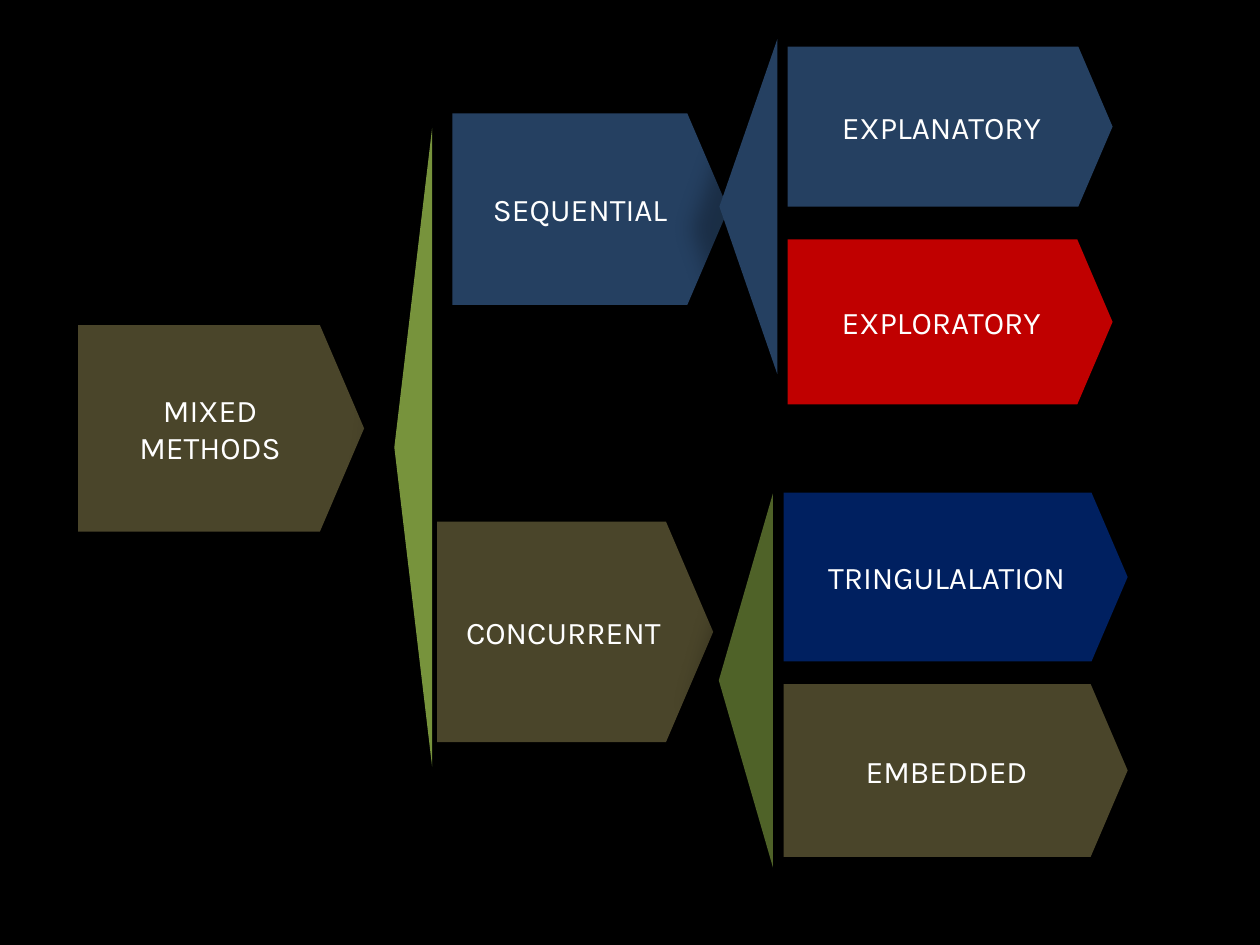
from lxml import etree
from pptx import Presentation
from pptx.dml.color import RGBColor
from pptx.enum.shapes import MSO_SHAPE
from pptx.enum.text import MSO_ANCHOR, PP_ALIGN
from pptx.oxml.ns import qn
from pptx.util import Inches, Pt

THEME = {
    "font": "Karla", "size": 18,
    "black": "000000", "white": "FFFFFF", "olive": "4A452A", "blue": "254061",
    "red": "C00000", "navy": "002060", "lime": "77933C", "green": "4F6228",
}
SHADOW = {"blurRad": Pt(11.8), "dist": Pt(19.7), "dir": 141 * 60000}
SHADOW_ALPHA = 28
POINT = 0.214

# label, colour, left, top, width, height
BOXES = [
    ("MIXED METHODS", "olive", 0.62, 2.58, 2.27, 1.64),
    ("SEQUENTIAL", "blue", 3.59, 0.9, 2.19, 1.52),
    ("CONCURRENT", "olive", 3.47, 4.14, 2.19, 1.75),
    ("EXPLANATORY", "blue", 6.25, 0.37, 2.58, 1.27),
    ("EXPLORATORY", "red", 6.25, 1.9, 2.58, 1.31),
    ("TRINGULALATION", "navy", 6.22, 3.91, 2.73, 1.34),
    ("EMBEDDED", "olive", 6.22, 5.43, 2.73, 1.37),
]
# colour, centre x, centre y, base, depth
BRANCHES = [
    ("lime", 3.28, 3.55, 5.07, 0.3),
    ("blue", 5.94, 1.64, 2.66, 0.46),
    ("green", 5.92, 5.4, 2.97, 0.43),
]


def color(name):
    return RGBColor.from_string(THEME[name])


def add_shadow(sp):
    sp.shadow.inherit = False
    effects = sp._element.spPr.find(qn("a:effectLst"))
    outer = etree.SubElement(effects, qn("a:outerShdw"), algn="ctr",
                             **{k: str(int(v)) for k, v in SHADOW.items()})
    tint = etree.SubElement(outer, qn("a:srgbClr"), val=THEME["black"])
    etree.SubElement(tint, qn("a:alpha"), val=str(SHADOW_ALPHA * 1000))


def add_solid(slide, kind, fill, *box):
    sp = slide.shapes.add_shape(kind, *map(Inches, box))
    sp.fill.solid()
    sp.fill.fore_color.rgb = color(fill)
    sp.line.fill.background()
    add_shadow(sp)
    return sp


def add_box(slide, label, fill, *box):
    sp = add_solid(slide, MSO_SHAPE.PENTAGON, fill, *box)
    sp.adjustments[0] = POINT
    tf = sp.text_frame
    tf.word_wrap = True
    tf.vertical_anchor = MSO_ANCHOR.MIDDLE
    p = tf.paragraphs[0]
    p.text = label
    p.alignment = PP_ALIGN.CENTER
    p.font.name = THEME["font"]
    p.font.size = Pt(THEME["size"])
    p.font.color.rgb = color("white")


def add_branch(slide, fill, cx, cy, base, depth):
    """Add a triangle that points left, centred on (cx, cy)."""
    sp = add_solid(slide, MSO_SHAPE.ISOSCELES_TRIANGLE, fill,
                   cx - base / 2, cy - depth / 2, base, depth)
    sp.rotation = 270


def main():
    prs = Presentation()
    prs.slide_width, prs.slide_height = Inches(10), Inches(7.5)
    slide = prs.slides.add_slide(prs.slide_layouts[6])
    slide.background.fill.solid()
    slide.background.fill.fore_color.rgb = color("black")
    for box in BOXES:
        add_box(slide, *box)
    for branch in BRANCHES:
        add_branch(slide, *branch)
    prs.save("out.pptx")


if __name__ == "__main__":
    main()
